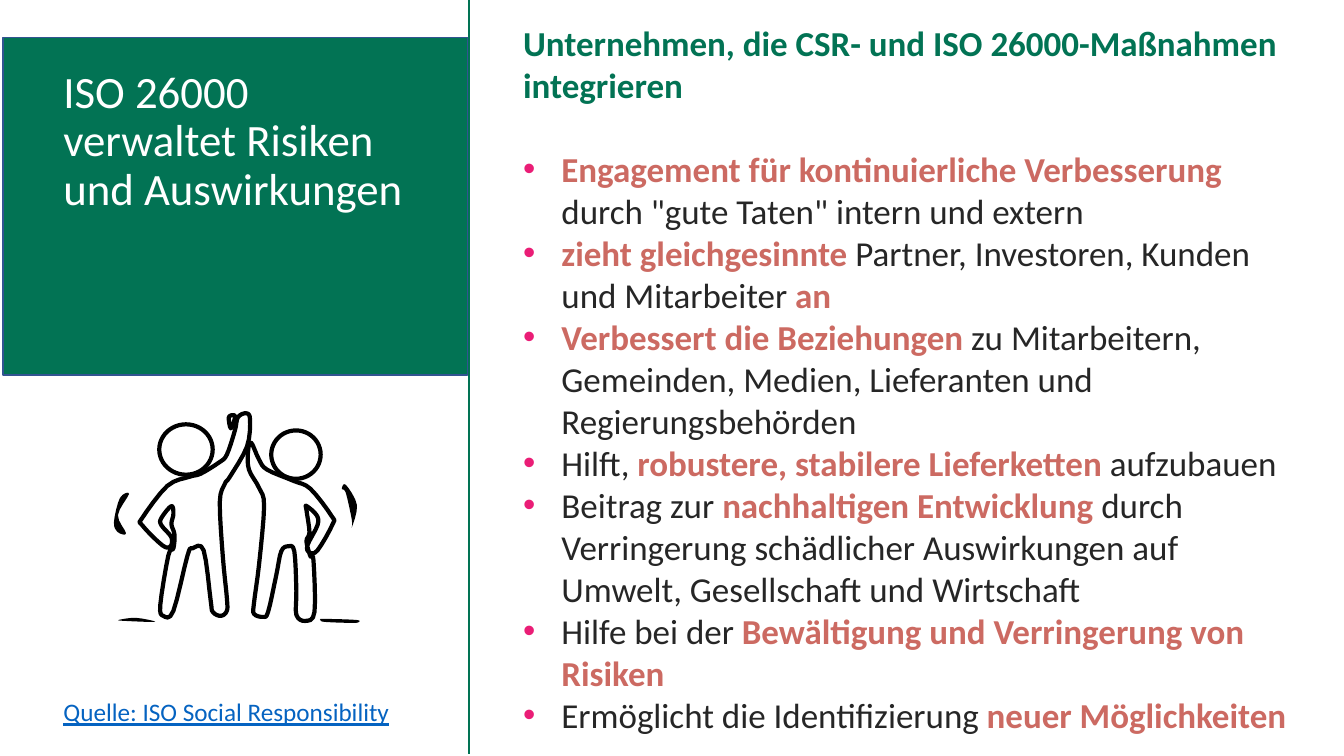
from lxml.etree import SubElement
from pptx import Presentation
from pptx.dml.color import RGBColor
from pptx.enum.shapes import MSO_CONNECTOR, MSO_SHAPE
from pptx.enum.text import MSO_ANCHOR
from pptx.oxml.ns import qn
from pptx.util import Inches, Pt

FONT = "Calibri"
GREEN, CORAL, PINK = "027354", "CC6A62", "EA1D76"
DARK, WHITE, BLACK = "262626", "FFFFFF", "000000"
OUTLINE_WIDTH = 3

HEADING = "Unternehmen, die CSR- und ISO 26000-Maßnahmen integrieren"
BENEFITS = [
    '*Engagement für kontinuierliche Verbesserung *durch "gute Taten" intern und extern',
    "*zieht gleichgesinnte *Partner, Investoren, Kunden und Mitarbeiter *an",
    "*Verbessert die Beziehungen *zu Mitarbeitern, Gemeinden, Medien, "
    "Lieferanten und Regierungsbehörden",
    "Hilft, *robustere, stabilere Lieferketten *aufzubauen",
    "Beitrag zur *nachhaltigen Entwicklung *durch Verringerung schädlicher "
    "Auswirkungen auf Umwelt, Gesellschaft und Wirtschaft",
    "Hilfe bei der *Bewältigung und Verringerung von Risiken",
    "Ermöglicht die Identifizierung *neuer Möglichkeiten",
]

LEFT_BODY = [
    (2.48, 4.16), (2.44, 4.1), (2.36, 4.14), (2.33, 4.27), (2.25, 4.51), (2.17, 4.59),
    (1.99, 4.7), (1.88, 4.73), (1.66, 4.82), (1.41, 5.14), (1.41, 5.21), (1.61, 5.41),
    (1.69, 5.42), (1.7, 5.33), (1.6, 5.21), (1.6, 5.14), (1.7, 5.02), (1.72, 5.1),
    (1.7, 5.2), (1.73, 5.3), (1.72, 5.44), (1.67, 5.51), (1.59, 6), (1.62, 6.11),
    (1.72, 6.06), (1.86, 5.51), (1.91, 5.44), (2.02, 5.46), (2.09, 5.96), (2.11, 6.07),
    (2.19, 6.11), (2.25, 6.06), (2.25, 5.93), (2.21, 5.52), (2.18, 4.98), (2.23, 4.8),
    (2.28, 4.73), (2.45, 4.43),
]
RIGHT_BODY = [
    (3.07, 5.48), (3.15, 5.46), (3.3, 5.2), (3.29, 5.12), (3.08, 4.85), (2.91, 4.77),
    (2.65, 4.66), (2.57, 4.56), (2.49, 4.39), (2.46, 4.49), (2.47, 4.66), (2.57, 4.84),
    (2.62, 5.02), (2.57, 5.6), (2.52, 5.98), (2.52, 6.09), (2.61, 6.12), (2.66, 6.07),
    (2.74, 5.71), (2.79, 5.47), (2.86, 5.42), (2.92, 5.47), (2.94, 5.86), (2.94, 6.1),
    (3.03, 6.16), (3.12, 6.07), (3.11, 5.56), (3.08, 5.52), (3.04, 5.37), (3.07, 5.28),
    (3.04, 5.06), (3.04, 5.02), (3.14, 5.11), (3.15, 5.21), (3.05, 5.41),
]
RIGHT_THUMB = [(2.33, 4.15), (2.32, 4.12), (2.27, 4.14), (2.29, 4.25)]
HEADS = [(1.58, 4.21, 0.53, 0.5), (2.69, 4.27, 0.49, 0.48)]
MOTION_MARKS = [
    [(3.49, 5.23), (3.54, 5.01), (3.43, 4.81), (3.39, 4.85), (3.43, 4.89), (3.49, 5.16)],
    [(1.25, 5.29), (1.17, 5.11), (1.28, 4.9), (1.19, 4.94), (1.13, 5.18), (1.17, 5.28)],
    [(1.35, 6.13), (1.18, 6.15), (1.23, 6.16), (1.54, 6.17)],
    [(3.53, 6.15), (3.21, 6.14), (3.18, 6.15), (3.22, 6.17), (3.5, 6.18), (3.56, 6.17)],
]


def color(value):
    """Turn a hex string into a colour."""
    return RGBColor.from_string(value)


def paint(shape, fill, line=None, width=1):
    """Give a shape its fill and outline, without shadow."""
    shape.shadow.inherit = False
    shape.fill.solid()
    shape.fill.fore_color.rgb = color(fill)
    if line:
        shape.line.color.rgb = color(line)
        shape.line.width = Pt(width)
    else:
        shape.line.fill.background()


def add_preset(page, kind, place, fill, line, width=1):
    """Add a painted preset shape."""
    shape = page.shapes.add_shape(kind, *map(Inches, place))
    paint(shape, fill, line, width)


def smooth_outline(points, steps=4):
    """Run a closed smooth curve through points given in inches."""
    curve = []
    for index, start in enumerate(points):
        before = points[index - 1]
        end = points[(index + 1) % len(points)]
        after = points[(index + 2) % len(points)]
        for step in range(steps):
            t = step / steps
            curve.append(tuple(
                Inches(b + t * (c - a + t * (2 * a - 5 * b + 4 * c - d
                                             + t * (3 * (b - c) + d - a))) / 2)
                for a, b, c, d in zip(before, start, end, after)))
    return curve


def add_outline(page, points, fill, line=None):
    """Add a closed, smoothed freeform."""
    curve = smooth_outline(points)
    builder = page.shapes.build_freeform(*curve[0])
    builder.add_line_segments(curve[1:], close=True)
    paint(builder.convert_to_shape(), fill, line, OUTLINE_WIDTH)


def add_divider(page, x, top, bottom):
    """Add the vertical line between the columns."""
    line = page.shapes.add_connector(
        MSO_CONNECTOR.STRAIGHT, *map(Inches, (x, top, x, bottom)))
    line.line.color.rgb = color(GREEN)
    line.line.width = Pt(1)
    SubElement(line._element.spPr, qn("a:effectLst"))


def add_frame(page, place, anchor=MSO_ANCHOR.TOP):
    """Add a wrapping text box and return its text frame."""
    frame = page.shapes.add_textbox(*map(Inches, place)).text_frame
    frame.word_wrap = True
    frame.vertical_anchor = anchor
    return frame


def add_span(para, text, size, tone, bold=False):
    """Add a formatted run to a paragraph."""
    span = para.add_run()
    span.text = text
    span.font.name = FONT
    span.font.size = Pt(size)
    span.font.color.rgb = color(tone)
    span.font.bold = bold
    return span


def add_bullet(para):
    """Give a paragraph a pink bullet and a hanging indent."""
    properties = para._p.get_or_add_pPr()
    properties.set("marL", str(Inches(0.38)))
    properties.set("indent", str(-Inches(0.38)))
    tone = SubElement(properties, qn("a:buClr"))
    SubElement(tone, qn("a:srgbClr"), val=PINK)
    SubElement(properties, qn("a:buFont"), typeface="Arial")
    SubElement(properties, qn("a:buChar"), char="•")


def add_benefits(page):
    """Add the heading and the list, where asterisks switch emphasis."""
    frame = add_frame(page, (5.09, 0.09, 7.81, 7.33), MSO_ANCHOR.MIDDLE)
    heading = frame.paragraphs[0]
    add_span(heading, HEADING, 25, GREEN, True)
    heading.space_after = Pt(30)
    for benefit in BENEFITS:
        para = frame.add_paragraph()
        add_bullet(para)
        for index, text in enumerate(benefit.split("*")):
            strong = index % 2 == 1
            if text:
                add_span(para, text, 25, CORAL if strong else DARK, strong)


def add_high_five(page):
    """Draw the two figures clapping hands."""
    for points in (RIGHT_THUMB, LEFT_BODY, RIGHT_BODY):
        add_outline(page, points, WHITE, BLACK)
    for place in HEADS:
        add_preset(page, MSO_SHAPE.OVAL, place, WHITE, BLACK, OUTLINE_WIDTH)
    for points in MOTION_MARKS:
        add_outline(page, points, BLACK)


def main():
    """Build and save the slide."""
    deck = Presentation()
    deck.slide_width, deck.slide_height = Inches(13.33), Inches(7.5)
    page = deck.slides.add_slide(deck.slide_layouts[6])
    add_divider(page, 4.65, -0.02, 7.48)
    add_preset(page, MSO_SHAPE.RECTANGLE, (0.03, 0.37, 4.61, 3.35), GREEN, "325491")
    add_benefits(page)
    title = add_frame(page, (0.53, 0.64, 3.81, 6.14)).paragraphs[0]
    title.line_spacing = 0.9
    add_span(title, "ISO 26000 verwaltet Risiken und Auswirkungen", 32, WHITE)
    source = add_frame(page, (0.53, 6.86, 3.62, 0.4)).paragraphs[0]
    span = add_span(source, "Quelle: ISO Social Responsibility", 18, "0563C1")
    span.font.underline = True
    add_high_five(page)
    deck.save("out.pptx")


if __name__ == "__main__":
    main()
